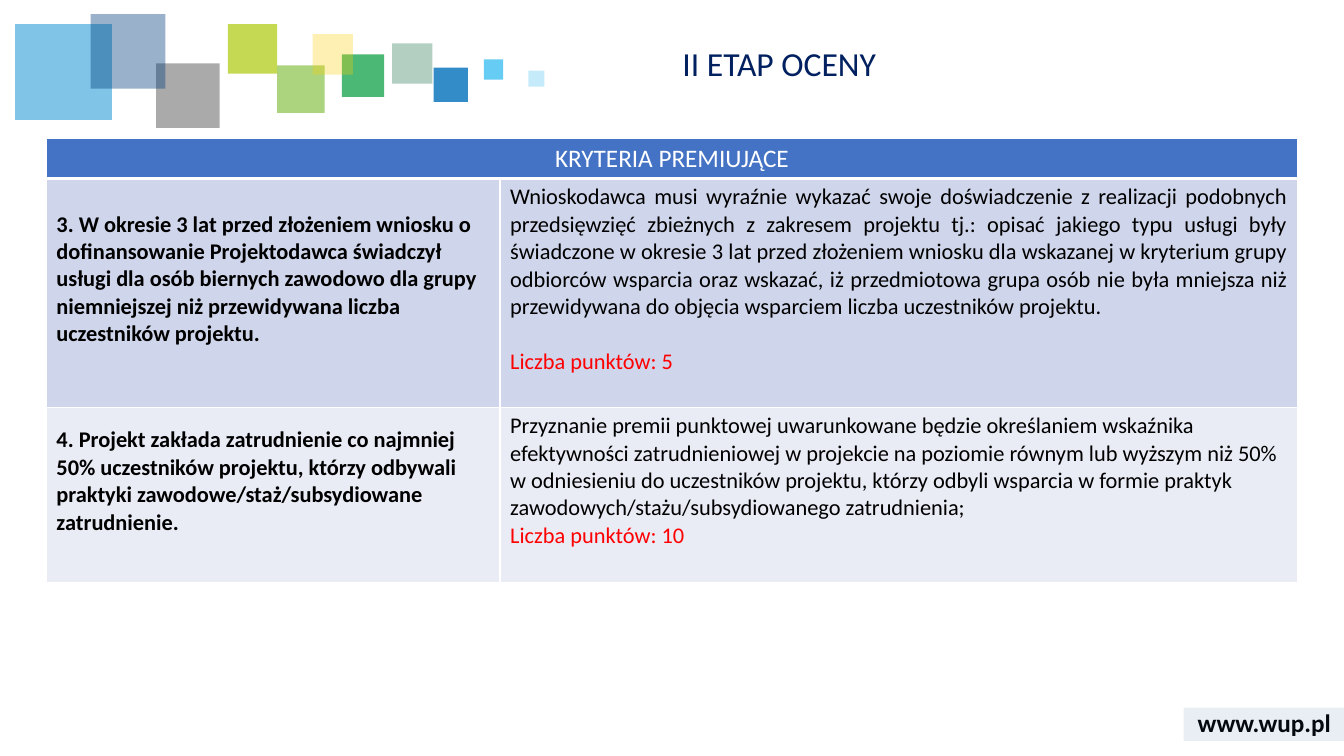
from lxml import etree
from pptx import Presentation
from pptx.dml.color import RGBColor
from pptx.enum.shapes import MSO_SHAPE
from pptx.enum.text import MSO_ANCHOR, PP_ALIGN
from pptx.oxml.ns import qn
from pptx.util import Inches, Pt

RECTANGLE = MSO_SHAPE.RECTANGLE
TOP, MIDDLE = MSO_ANCHOR.TOP, MSO_ANCHOR.MIDDLE
LEFT, CENTER, JUSTIFY = PP_ALIGN.LEFT, PP_ALIGN.CENTER, PP_ALIGN.JUSTIFY

FONT = "Calibri"
COLORS = {
    "black": "000000", "white": "FFFFFF", "navy": "002060", "red": "FF0000",
    "header": "4472C4", "band_dark": "CFD5EA", "band_light": "E9EBF5",
    "footer": "2F5597", "pine": "006138", "blue": "006EB9",
    "green": "009A3C", "azure": "028BD3", "leaf": "75B82A",
    "gray": "575757", "deep_blue": "003D7C", "sky": "40C0F1",
    "lime": "AFCA0B", "yellow": "FED000",
}

# left, top, width, height, color, opacity in percent
SQUARES = [
    (3.89, 0.43, 0.4, 0.4, "pine", 30),
    (4.3, 0.67, 0.34, 0.34, "blue", 80),
    (3.39, 0.54, 0.42, 0.42, "green", 70),
    (0.15, 0.24, 0.96, 0.95, "azure", 50),
    (2.75, 0.65, 0.47, 0.47, "leaf", 60),
    (1.55, 0.63, 0.63, 0.64, "gray", 50),
    (0.9, 0.14, 0.74, 0.74, "deep_blue", 40),
    (4.8, 0.59, 0.19, 0.2, "sky", 80),
    (2.26, 0.24, 0.49, 0.49, "lime", 70),
    (3.1, 0.34, 0.4, 0.4, "yellow", 30),
    (5.24, 0.7, 0.16, 0.16, "sky", 30),
]

COLUMN_WIDTHS = [4.5, 7.91]
ROW_HEIGHTS = [0.4, 2.27, 1.74]

# criterion, explanation, its alignment, points, gap above the points, band
CRITERIA = [
    ("3. W okresie 3 lat przed złożeniem wniosku o dofinansowanie "
     "Projektodawca świadczył usługi dla osób biernych zawodowo dla grupy "
     "niemniejszej niż przewidywana liczba uczestników projektu.",
     "Wnioskodawca musi wyraźnie wykazać swoje doświadczenie z realizacji "
     "podobnych przedsięwzięć zbieżnych z zakresem projektu tj.: opisać "
     "jakiego typu usługi były świadczone w okresie 3 lat przed złożeniem "
     "wniosku dla wskazanej w kryterium grupy odbiorców wsparcia oraz "
     "wskazać, iż przedmiotowa grupa osób nie była mniejsza niż przewidywana "
     "do objęcia wsparciem liczba uczestników projektu.",
     JUSTIFY, "Liczba punktów: 5", 19.5, "band_dark"),
    ("4. Projekt zakłada zatrudnienie co najmniej 50% uczestników projektu, "
     "którzy odbywali praktyki zawodowe/staż/subsydiowane zatrudnienie.",
     "Przyznanie premii punktowej uwarunkowane będzie określaniem wskaźnika "
     "efektywności zatrudnieniowej w projekcie na poziomie równym lub wyższym "
     "niż 50% w odniesieniu do uczestników projektu, którzy odbyli wsparcia w "
     "formie praktyk zawodowych/stażu/subsydiowanego zatrudnienia;",
     LEFT, "Liczba punktów: 10", 0, "band_light"),
]


def color(name):
    return RGBColor.from_string(COLORS[name])


def write(para, text, size=16, ink="black", bold=False, align=LEFT,
          before=0, spacing=None):
    para.alignment = align
    if before:
        para.space_before = Pt(before)
    if spacing:
        para.line_spacing = spacing
    span = para.add_run()
    span.text = text
    span.font.name = FONT
    span.font.size = Pt(size)
    span.font.bold = bold
    span.font.color.rgb = color(ink)


def add_text(page, left, top, width, height, text, anchor=TOP, **style):
    box = page.shapes.add_textbox(
        Inches(left), Inches(top), Inches(width), Inches(height))
    box.text_frame.word_wrap = True
    box.text_frame.vertical_anchor = anchor
    write(box.text_frame.paragraphs[0], text, **style)


def add_square(page, left, top, width, height, ink, opacity):
    square = page.shapes.add_shape(
        RECTANGLE, Inches(left), Inches(top), Inches(width), Inches(height))
    square.shadow.inherit = False
    square.line.fill.background()
    square.fill.solid()
    square.fill.fore_color.rgb = color(ink)
    tint = square.fill._xPr.find(".//" + qn("a:srgbClr"))
    etree.SubElement(tint, qn("a:alpha"), val=str(opacity * 1000))


def format_cell(cell, fill, anchor=TOP, bottom_border=1):
    # Borders come before the fill in the cell properties
    properties = cell._tc.get_or_add_tcPr()
    for side in "LRTB":
        width = bottom_border if side == "B" else 1
        line = etree.SubElement(
            properties, qn("a:ln" + side), w=str(Pt(width)))
        paint = etree.SubElement(line, qn("a:solidFill"))
        etree.SubElement(paint, qn("a:srgbClr"), val=COLORS["white"])
    cell.fill.solid()
    cell.fill.fore_color.rgb = color(fill)
    cell.vertical_anchor = anchor
    return cell.text_frame


def add_criteria_table(page):
    table = page.shapes.add_table(
        len(ROW_HEIGHTS), len(COLUMN_WIDTHS), Inches(0.46), Inches(1.37),
        Inches(sum(COLUMN_WIDTHS)), Inches(sum(ROW_HEIGHTS))).table
    for column, width in zip(table.columns, COLUMN_WIDTHS):
        column.width = Inches(width)
    for row, height in zip(table.rows, ROW_HEIGHTS):
        row.height = Inches(height)

    # Header across both columns
    header = table.cell(0, 0)
    header.merge(table.cell(0, 1))
    frame = format_cell(header, "header", bottom_border=3)
    write(frame.paragraphs[0], "KRYTERIA PREMIUJĄCE", size=18, ink="white",
          align=CENTER)

    # One row for each criterion
    for number, entry in enumerate(CRITERIA, start=1):
        criterion, explanation, align, points, gap, band = entry
        name_cell = table.cell(number, 0)
        frame = format_cell(name_cell, band, anchor=MIDDLE)
        name_cell.margin_bottom = Inches(0.32)
        write(frame.paragraphs[0], criterion, bold=True)
        frame = format_cell(table.cell(number, 1), band)
        write(frame.paragraphs[0], explanation, align=align)
        write(frame.add_paragraph(), points, ink="red", align=JUSTIFY,
              before=gap)


def main():
    deck = Presentation()
    deck.slide_width, deck.slide_height = Inches(13.33), Inches(7.5)
    page = deck.slides.add_slide(deck.slide_layouts[6])

    # Footer address under its tinted band
    add_text(page, 11.74, 6.97, 1.6, 0.4, "www.wup.pl", anchor=MIDDLE,
             size=18, bold=True, align=CENTER)
    add_square(page, 11.74, 7.02, 1.6, 0.33, "footer", 10)

    # Decorative squares
    for square in SQUARES:
        add_square(page, *square)

    # Content
    add_criteria_table(page)
    add_text(page, 6.67, 0.42, 6.36, 0.55, "II ETAP OCENY", size=24,
             ink="navy", spacing=0.9)
    deck.save("out.pptx")


if __name__ == "__main__":
    main()
